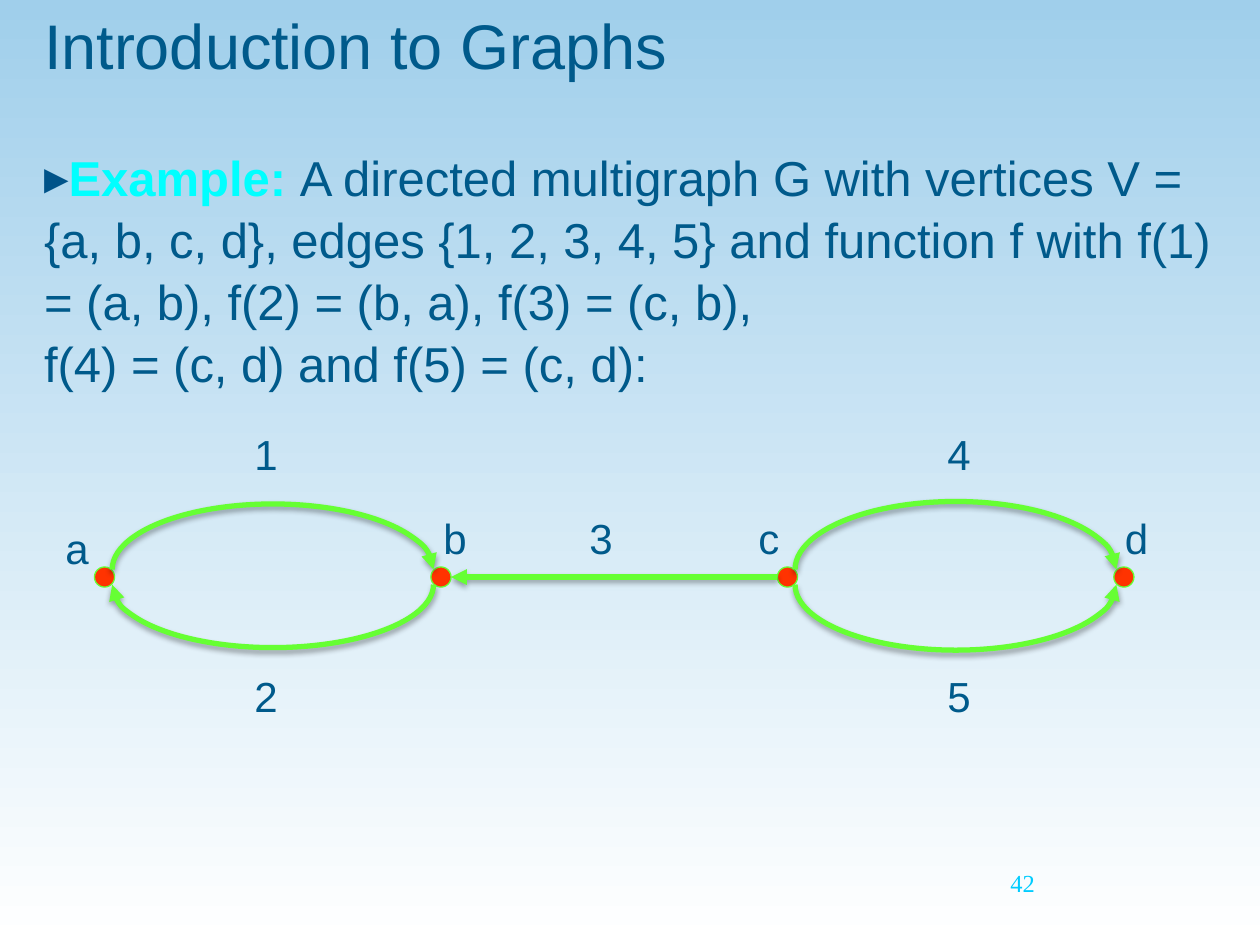
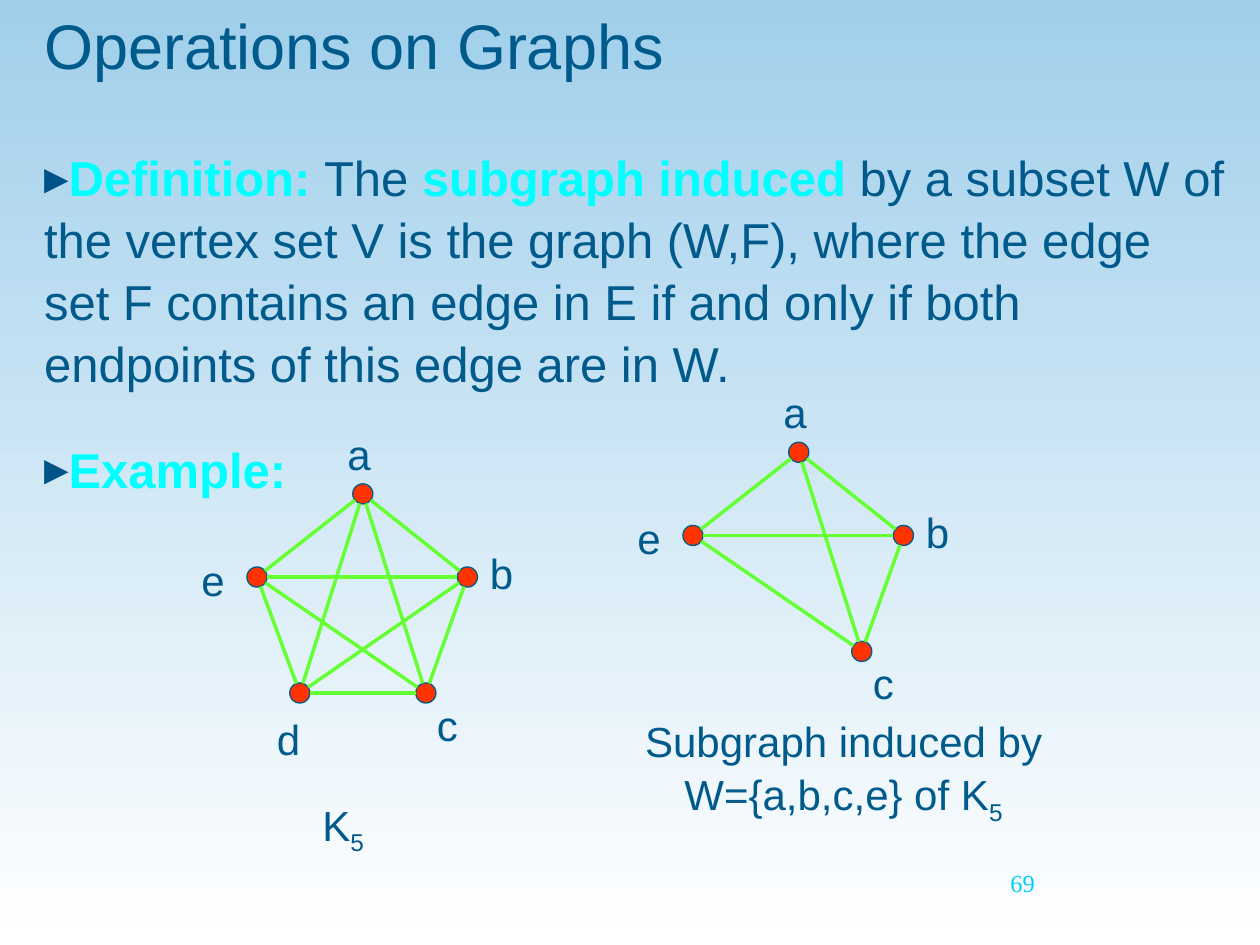
from dataclasses import dataclass
from itertools import combinations
from math import hypot

from lxml.etree import SubElement
from pptx import Presentation
from pptx.dml.color import RGBColor
from pptx.enum.shapes import MSO_CONNECTOR as CXN, MSO_SHAPE as SHAPE
from pptx.enum.text import MSO_ANCHOR as ANCHOR, MSO_AUTO_SIZE as AUTO, PP_ALIGN as ALIGN
from pptx.oxml.ns import qn
from pptx.util import Inches, Pt


@dataclass(frozen=True)
class Theme:
    sky: str = "A0CFEB"
    white: str = "FFFFFF"
    navy: str = "005A8B"
    bullet: str = "005389"
    cyan: str = "00FFFF"
    number: str = "00CCFF"
    vertex: str = "FF3300"
    edge: str = "66FF33"
    font: str = "Arial"
    number_font: str = "Times New Roman"
    title_size: int = 36
    body_size: int = 28
    label_size: int = 24
    number_size: int = 14
    line_spacing: float = 1.05


T = Theme()
RADIUS = 0.08

# Vertex centres and label corners, in inches from the graph's own corner.
PENTAGON = {
    "a": ((1.38, 0.59), (1.16, 0)),
    "b": ((2.21, 1.25), (2.29, 0.95)),
    "c": ((1.88, 2.17), (1.87, 2.15)),
    "d": ((0.88, 2.17), (0.6, 2.26)),
    "e": ((0.54, 1.25), (0, 1)),
}
CHAIN = {
    "a": ((0.41, 1.25), (0, 0.75)),
    "b": ((3.08, 1.25), (3, 0.67)),
    "c": ((5.83, 1.25), (5.5, 0.67)),
    "d": ((8.5, 1.25), (8.41, 0.67)),
}


def rgb(color):
    return RGBColor.from_string(color)


def inches(*values):
    return [Inches(v) for v in values]


def add_run(p, text, size, color=T.navy, bold=False, font=T.font):
    r = p.add_run()
    r.text = text
    r.font.size, r.font.bold, r.font.name = Pt(size), bold, font
    r.font.color.rgb = rgb(color)
    return r


def add_subscript(p, text, size):
    r = add_run(p, text, size)
    r._r.get_or_add_rPr().set("baseline", "-25000")


def add_textbox(slide, box):
    """Add a wrapping text box and return its first paragraph."""
    tf = slide.shapes.add_textbox(*inches(*box)).text_frame
    tf.word_wrap = True
    p = tf.paragraphs[0]
    p.line_spacing = T.line_spacing
    return p


def add_label(slide, x, y, text):
    add_run(add_textbox(slide, (x, y, 0.5, 0.5)), text, T.label_size)


def set_bullet(p):
    pPr = p._p.get_or_add_pPr()
    pPr.set("marL", "0")
    pPr.set("indent", "0")
    color = SubElement(pPr, qn("a:buClr"))
    SubElement(color, qn("a:srgbClr"), val=T.bullet)
    SubElement(pPr, qn("a:buFont"), typeface=T.font)
    SubElement(pPr, qn("a:buChar"), char="▸")


def place(placeholder, box):
    """Move a placeholder and return its top-anchored text frame."""
    (placeholder.left, placeholder.top,
     placeholder.width, placeholder.height) = inches(*box)
    tf = placeholder.text_frame
    tf.auto_size, tf.vertical_anchor, tf.word_wrap = AUTO.NONE, ANCHOR.TOP, True
    return tf


def add_slide(prs, title, number, body_height, paragraphs):
    """Paragraphs are lists of (text, is_term); a newline text breaks the line."""
    slide = prs.slides.add_slide(prs.slide_layouts[1])
    p = place(slide.shapes.title, (0.25, 0, 9.42, 1)).paragraphs[0]
    p.alignment = ALIGN.LEFT
    add_run(p, title, T.title_size)

    tf = place(slide.placeholders[1], (0.25, 1.1, 9.58, body_height))
    for i, runs in enumerate(paragraphs):
        p = tf.add_paragraph() if i else tf.paragraphs[0]
        p.line_spacing = T.line_spacing
        p.space_before, p.space_after = Pt(25.6 if i else 0), Pt(0)
        set_bullet(p)
        for text, is_term in runs:
            if text == "\n":
                p.add_line_break()
            else:
                add_run(p, text, T.body_size, T.cyan if is_term else T.navy, is_term)

    p = add_textbox(slide, (7.92, 6.83, 2.08, 0.5))
    add_run(p, number, T.number_size, T.number, font=T.number_font)
    return slide


def style_edge(s, width, arrow=None):
    """Colour an edge; an arrow ("headEnd" or "tailEnd") also brings a shadow."""
    s.line.color.rgb = rgb(T.edge)
    s.line.width = Pt(width)
    effects = SubElement(s._element.spPr, qn("a:effectLst"))
    if arrow:
        SubElement(s.line._get_or_add_ln(), qn("a:" + arrow), type="triangle")
        shadow = SubElement(effects, qn("a:outerShdw"), blurRad=str(Pt(3.1)),
                            dist=str(Pt(1.8)), dir="5400000", rotWithShape="0")
        color = SubElement(shadow, qn("a:srgbClr"), val="000000")
        SubElement(color, qn("a:alpha"), val="35000")


def add_edge(slide, start, end, width, arrow=None):
    """Join two vertex centres, stopping at the rims of the vertices."""
    (x1, y1), (x2, y2) = start, end
    length = hypot(x2 - x1, y2 - y1)
    dx, dy = RADIUS * (x2 - x1) / length, RADIUS * (y2 - y1) / length
    s = slide.shapes.add_connector(
        CXN.STRAIGHT, *inches(x1 + dx, y1 + dy, x2 - dx, y2 - dy))
    style_edge(s, width, arrow)


def add_arc(slide, left, right, rise, upper, arrow):
    """Add a half ellipse above or below two vertices on one level."""
    gap = 0.06
    x, y = left[0] + gap, left[1] + (-gap if upper else gap)
    s = slide.shapes.add_shape(
        SHAPE.ARC, *inches(x, y - rise, right[0] - gap - x, 2 * rise))
    half_turn = 180 * 60000 / 100000
    s.adjustments[0], s.adjustments[1] = (half_turn, 0) if upper else (0, half_turn)
    s.fill.background()
    style_edge(s, 3, arrow)


def add_vertices(slide, x, y, layout, outline):
    """Draw the vertices with their labels and return the centres by name."""
    centres = {}
    for name, ((vx, vy), (lx, ly)) in layout.items():
        cx, cy = centres[name] = x + vx, y + vy
        s = slide.shapes.add_shape(
            SHAPE.FLOWCHART_CONNECTOR,
            *inches(cx - RADIUS, cy - RADIUS, 2 * RADIUS, 2 * RADIUS))
        s.shadow.inherit = False
        s.fill.solid()
        s.fill.fore_color.rgb = rgb(T.vertex)
        s.line.color.rgb = rgb(outline)
        s.line.width = Pt(0.75)
        add_label(slide, x + lx, y + ly, name)
    return centres


def add_multigraph(slide, x, y):
    v = add_vertices(slide, x, y, CHAIN, T.edge)
    add_arc(slide, v["a"], v["b"], 0.52, True, "tailEnd")
    add_arc(slide, v["a"], v["b"], 0.5, False, "tailEnd")
    add_edge(slide, v["c"], v["b"], 3, "tailEnd")
    add_arc(slide, v["c"], v["d"], 0.54, True, "tailEnd")
    add_arc(slide, v["c"], v["d"], 0.52, False, "headEnd")
    edge_labels = {"1": (1.5, 0), "2": (1.5, 1.92), "3": (4.16, 0.67),
                   "4": (7, 0), "5": (7, 1.92)}
    for text, (lx, ly) in edge_labels.items():
        add_label(slide, x + lx, y + ly, text)


def add_complete_graph(slide, x, y, names):
    layout = {name: PENTAGON[name] for name in names}
    centres = add_vertices(slide, x, y, layout, T.navy)
    for start, end in combinations(centres.values(), 2):
        add_edge(slide, start, end, 2)


def add_caption(slide, box, text, align=ALIGN.LEFT):
    """Write a caption that ends in the subscript 5."""
    p = add_textbox(slide, box)
    p.alignment = align
    add_run(p, text, T.label_size)
    add_subscript(p, "5", T.label_size)


def set_background(master):
    fill = master.background.fill
    fill.gradient()
    fill.gradient_angle = 270
    for stop, color in zip(fill.gradient_stops, (T.sky, T.white)):
        stop.color.rgb = rgb(color)


def build_introduction(prs):
    slide = add_slide(prs, "Introduction to Graphs", "42", 2.42, [[
        ("Example: ", True),
        ("A directed multigraph G with vertices V = {a, b, c, d}, edges "
         "{1, 2, 3, 4, 5} and function f with f(1) = (a, b), f(2) = (b, a), "
         "f(3) = (c, b),", False),
        ("\n", False),
        ("f(4) = (c, d) and f(5) = (c, d):", False),
    ]])
    add_multigraph(slide, 0.42, 3.33)


def build_operations(prs):
    slide = add_slide(prs, "Operations on Graphs", "69", 5.73, [
        [("Definition: ", True), ("The ", False), ("subgraph induced", True),
         (" by a subset W of the vertex set V is the graph (W,F), where the edge "
          "set F contains an edge in E if and only if both endpoints of this edge "
          "are in W.", False)],
        [("Example:", True)],
    ])
    add_complete_graph(slide, 1.5, 3.33, "abcde")
    add_caption(slide, (2.46, 6.27, 0.67, 0.57), "K")
    add_complete_graph(slide, 4.96, 3, "abce")
    add_caption(slide, (4.82, 5.61, 3.75, 0.91),
                "Subgraph induced by W={a,b,c,e} of K", ALIGN.CENTER)


def main():
    prs = Presentation()
    prs.slide_width, prs.slide_height = inches(10, 7.5)
    set_background(prs.slide_master)
    build_introduction(prs)
    build_operations(prs)
    prs.save("out.pptx")


if __name__ == "__main__":
    main()
